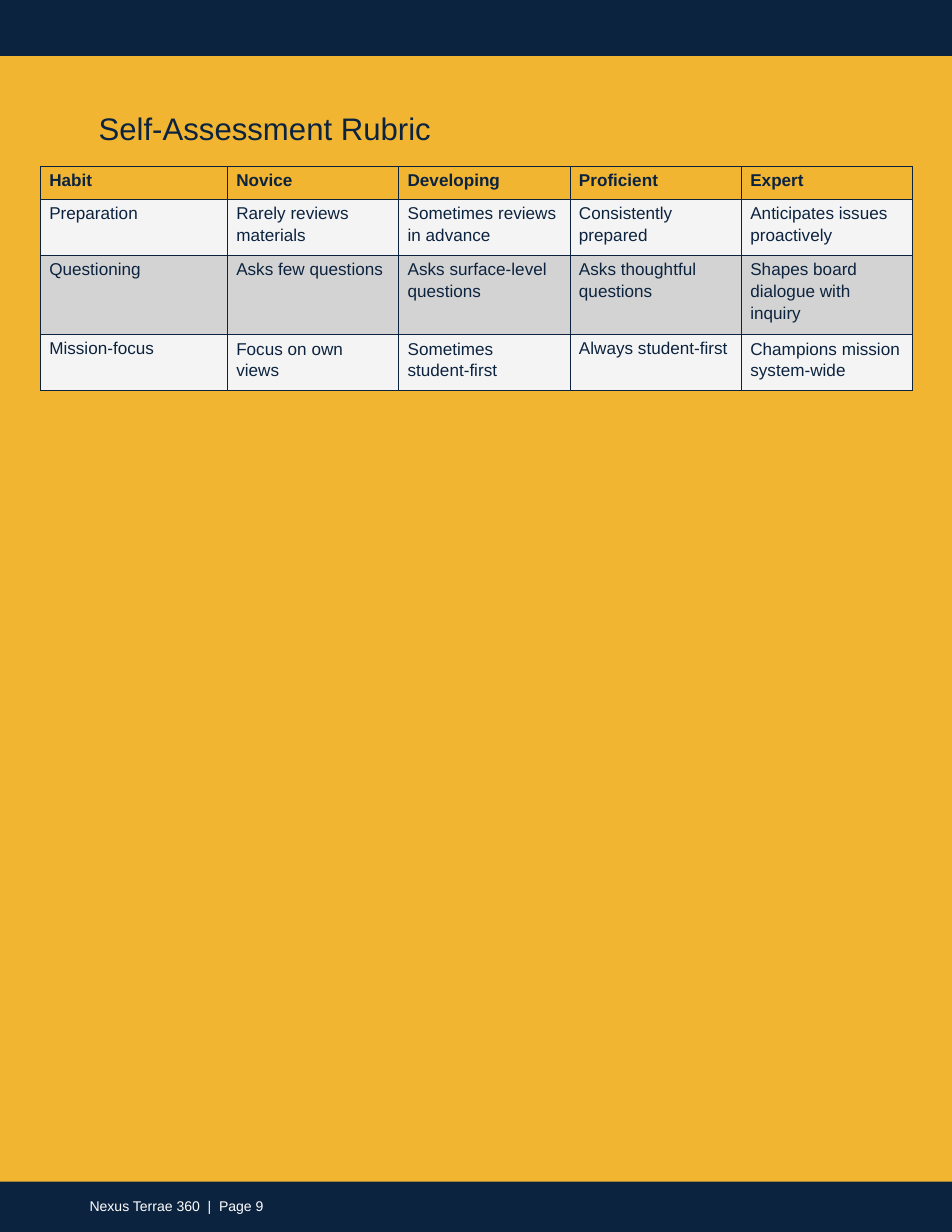
import pptx
import pptx.dml.color
import pptx.enum.shapes
import pptx.enum.text
import pptx.oxml.ns
import pptx.util
from lxml import etree
from pptx.util import Inches

NAVY = pptx.dml.color.RGBColor(0x0C, 0x23, 0x3F)
GOLD = pptx.dml.color.RGBColor(0xF1, 0xB5, 0x32)
HEADER = pptx.dml.color.RGBColor(0xF2, 0xB5, 0x31)
LIGHT = pptx.dml.color.RGBColor(0xF4, 0xF4, 0xF4)
GREY = pptx.dml.color.RGBColor(0xD3, 0xD3, 0xD3)
WHITE = pptx.dml.color.RGBColor(0xFF, 0xFF, 0xFF)

RUBRIC = [
    ["Habit", "Novice", "Developing", "Proficient", "Expert"],
    ["Preparation", "Rarely reviews materials", "Sometimes reviews in advance",
     "Consistently prepared", "Anticipates issues proactively"],
    ["Questioning", "Asks few questions", "Asks surface-level questions",
     "Asks thoughtful questions", "Shapes board dialogue with inquiry"],
    ["Mission-focus", "Focus on own views", "Sometimes student-first",
     "Always student-first", "Champions mission system-wide"],
]
ROW_FILLS = [HEADER, LIGHT, GREY, LIGHT]
ROW_HEIGHTS = [0.29, 0.5, 0.71, 0.5]
COL_WIDTHS = [1.67, 1.53, 1.53, 1.53, 1.53]
ONE_LINERS = {"Asks few questions", "Always student-first"}


def set_attrs(obj, **values):
    for name, value in values.items():
        setattr(obj, name, value)


def write(tf, text, size, color, bold=False, spacing=1.0):
    p = tf.paragraphs[0]
    set_attrs(p, alignment=pptx.enum.text.PP_ALIGN.LEFT, line_spacing=spacing)
    r = p.add_run()
    r.text = text
    set_attrs(r.font, name="Arial", size=pptx.util.Pt(size), bold=bold)
    r.font.color.rgb = color


def fill_frame(sp, text, size, color):
    tf = sp.text_frame
    set_attrs(tf, margin_left=Inches(0.01), margin_top=0, margin_right=0, margin_bottom=0,
              word_wrap=True, auto_size=pptx.enum.text.MSO_AUTO_SIZE.NONE,
              vertical_anchor=pptx.enum.text.MSO_ANCHOR.TOP)
    write(tf, text, size, color)


def add_band(s, left, top, width, height):
    sp = s.shapes.add_shape(pptx.enum.shapes.MSO_SHAPE.RECTANGLE, left, top, width, height)
    sp.shadow.inherit = False
    sp.fill.solid()
    sp.fill.fore_color.rgb = NAVY
    sp.line.fill.background()


def add_title(s, left, top, width, height):
    sp = s.shapes.title
    set_attrs(sp, left=left, top=top, width=width, height=height)
    fill_frame(sp, "Self-Assessment Rubric", 20, NAVY)


def add_footer(s, left, top, width, height):
    add_band(s, left, top, width, height)
    sp = s.shapes.add_textbox(left + Inches(0.79), top + Inches(0.14), Inches(1.81), Inches(0.17))
    fill_frame(sp, "Nexus Terrae 360  |  Page 9", 9, WHITE)


def add_borders(cell):
    tc_pr = cell._tc.get_or_add_tcPr()
    for i, side in enumerate(("lnL", "lnR", "lnT", "lnB")):
        ln = etree.Element(pptx.oxml.ns.qn("a:" + side), w=str(pptx.util.Pt(0.75)))
        fill = etree.SubElement(ln, pptx.oxml.ns.qn("a:solidFill"))
        etree.SubElement(fill, pptx.oxml.ns.qn("a:srgbClr"), val=str(NAVY))
        tc_pr.insert(i, ln)


def add_rubric(s, left, top, width, height):
    table = s.shapes.add_table(len(RUBRIC), len(COL_WIDTHS), left, top, width, height).table
    set_attrs(table, first_row=False, horz_banding=False)
    for col, col_width in zip(table.columns, COL_WIDTHS):
        col.width = Inches(col_width)
    for i, (row, texts) in enumerate(zip(table.rows, RUBRIC)):
        row.height = Inches(ROW_HEIGHTS[i])
        for j, (cell, text) in enumerate(zip(row.cells, texts)):
            single = i == 0 or j == 0 or text in ONE_LINERS
            set_attrs(cell, margin_left=Inches(0.08), margin_right=Inches(0.09),
                      margin_top=Inches(0.04 if single else 0.02), margin_bottom=0,
                      vertical_anchor=pptx.enum.text.MSO_ANCHOR.TOP)
            cell.fill.solid()
            cell.fill.fore_color.rgb = ROW_FILLS[i]
            write(cell.text_frame, text, 11, NAVY, i == 0, 1.0 if single else 1.14)
            add_borders(cell)


def main():
    prs = pptx.Presentation()
    set_attrs(prs, slide_width=Inches(8.5), slide_height=Inches(11))
    s = prs.slides.add_slide(prs.slide_layouts[5])
    s.background.fill.solid()
    s.background.fill.fore_color.rgb = GOLD
    add_band(s, 0, 0, prs.slide_width, Inches(0.5))
    add_title(s, Inches(0.87), Inches(0.98), Inches(2.99), Inches(0.36))
    add_rubric(s, Inches(0.36), Inches(1.49), Inches(sum(COL_WIDTHS)), Inches(sum(ROW_HEIGHTS)))
    add_footer(s, 0, Inches(10.55), prs.slide_width, Inches(0.45))
    prs.save("out.pptx")


if __name__ == "__main__":
    main()
